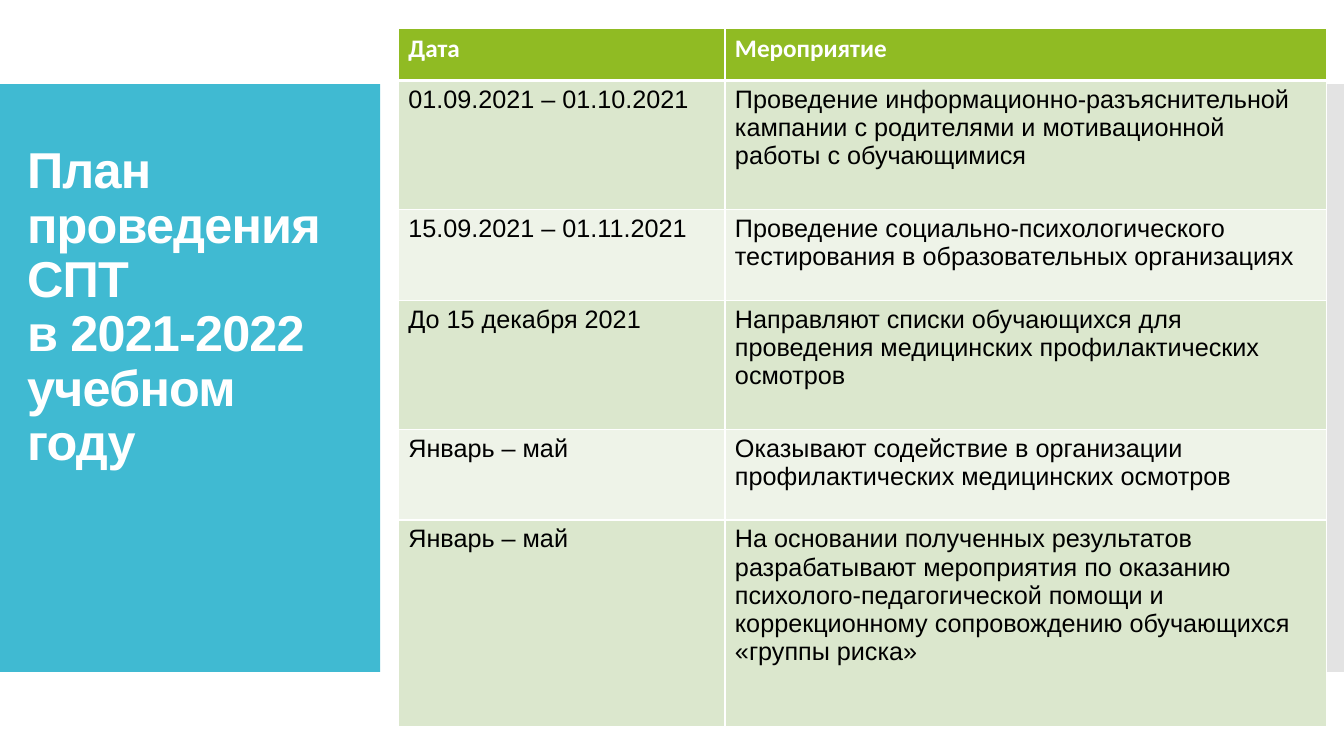
import pptx
import pptx.dml.color
import pptx.enum.shapes
import pptx.enum.text
import pptx.oxml
import pptx.oxml.ns
import pptx.util

COLORS = {
    "white": "FFFFFF", "black": "000000", "teal": "40BAD2", "gray": "C8C8C8",
    "header": "90BB23", "dark_band": "DBE7CD", "light_band": "EEF3E8",
}
SCHEDULE = [
    ("Дата", "Мероприятие"),
    ("01.09.2021 – 01.10.2021",
     "Проведение информационно-разъяснительной кампании с родителями "
     "и мотивационной работы с обучающимися"),
    ("15.09.2021 – 01.11.2021",
     "Проведение социально-психологического тестирования "
     "в образовательных организациях"),
    ("До 15 декабря 2021",
     "Направляют списки обучающихся для проведения медицинских "
     "профилактических осмотров"),
    ("Январь – май",
     "Оказывают содействие в организации профилактических медицинских осмотров"),
    ("Январь – май",
     "На основании полученных результатов разрабатывают мероприятия по оказанию "
     "психолого-педагогической помощи и коррекционному сопровождению обучающихся "
     "«группы риска»"),
]
COLUMN_WIDTHS = [3.24, 5.97]
ROW_HEIGHTS = [0.52, 1.28, 0.9, 1.28, 0.9, 2.05]
inches = pptx.util.Inches


def style_font(font, name, size, color, bold):
    font.name, font.size, font.bold = name, pptx.util.Pt(size), bold
    font.color.rgb = pptx.dml.color.RGBColor.from_string(COLORS[color])


def add_border(cell, side, position, width):
    line = pptx.oxml.parse_xml(
        f'<a:ln{side} {pptx.oxml.ns.nsdecls("a")} w="{pptx.util.Pt(width)}">'
        f'<a:solidFill><a:srgbClr val="{COLORS["white"]}"/></a:solidFill></a:ln{side}>')
    cell._tc.get_or_add_tcPr().insert(position, line)


deck = pptx.Presentation()
deck.slide_width, deck.slide_height = inches(13.33), inches(7.5)
page = deck.slides.add_slide(deck.slide_layouts[6])

# Side panels: the title panel and a half-transparent strip on the right edge
panel_top, panel_height = deck.slide_height // 9, deck.slide_height * 7 // 9
strip_width = inches(0.42)
for left, width, color in [(0, inches(3.77), "teal"),
                           (deck.slide_width - strip_width, strip_width, "gray")]:
    panel = page.shapes.add_shape(pptx.enum.shapes.MSO_SHAPE.RECTANGLE,
                                  left, panel_top, width, panel_height)
    panel.shadow.inherit = False
    panel.fill.solid()
    panel.fill.fore_color.rgb = pptx.dml.color.RGBColor.from_string(COLORS[color])
    panel.line.fill.background()
strip_color = panel._element.spPr.find(".//" + pptx.oxml.ns.qn("a:srgbClr"))
strip_color.append(pptx.oxml.parse_xml(
    f'<a:alpha {pptx.oxml.ns.nsdecls("a")} val="50000"/>'))

# Title
title = page.shapes.add_textbox(inches(0.17), inches(1.23), inches(3.18), inches(3.66))
title.text_frame.word_wrap = True
title.text_frame.vertical_anchor = pptx.enum.text.MSO_ANCHOR.MIDDLE
para = title.text_frame.paragraphs[0]
para.text = "План проведения СПТ\vв 2021-2022 учебном году"
para.line_spacing = 0.9
style_font(para.font, "Arial", 36, "white", True)
for span in para.runs:
    span._r.get_or_add_rPr().set("spc", "-60")

# Schedule table
table = page.shapes.add_table(
    len(SCHEDULE), len(COLUMN_WIDTHS), inches(3.95), inches(0.28),
    inches(sum(COLUMN_WIDTHS)), inches(sum(ROW_HEIGHTS))).table
for column, width in zip(table.columns, COLUMN_WIDTHS):
    column.width = inches(width)
for row_index, (row, height) in enumerate(zip(table.rows, ROW_HEIGHTS)):
    row.height = inches(height)
    is_header = row_index == 0
    band = "header" if is_header else ("light_band", "dark_band")[row_index % 2]
    for cell, text in zip(row.cells, SCHEDULE[row_index]):
        cell.text = text
        style_font(cell.text_frame.paragraphs[0].font,
                   "Calibri" if is_header else "Arial", 18,
                   "white" if is_header else "black", is_header)
        cell.fill.solid()
        cell.fill.fore_color.rgb = pptx.dml.color.RGBColor.from_string(COLORS[band])
        # A thick rule divides the header from the body
        widths = {"L": 1, "R": 1, "T": 3 if row_index == 1 else 1,
                  "B": 3 if is_header else 1}
        for position, (side, width) in enumerate(widths.items()):
            add_border(cell, side, position, width)

deck.save("out.pptx")
